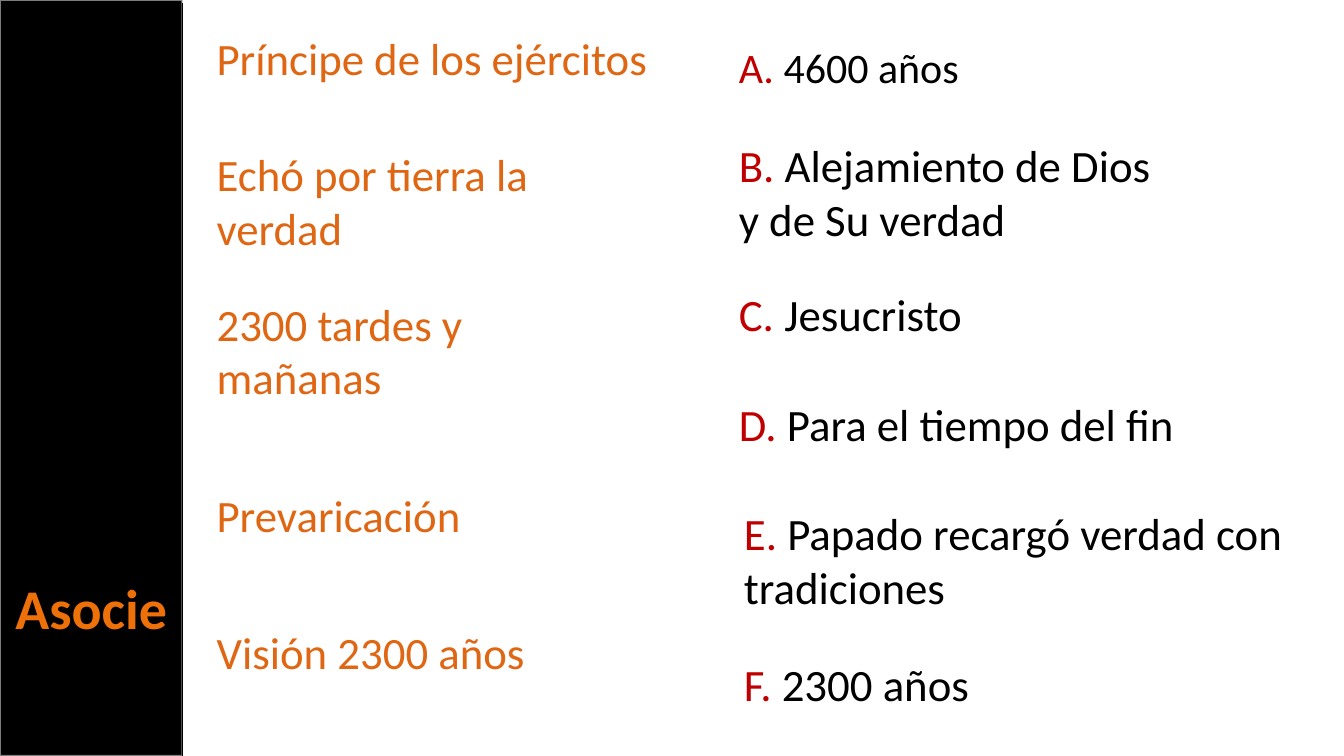
"""Build the "Asocie" matching-exercise slide."""
from pptx import Presentation
from pptx.dml.color import RGBColor
from pptx.enum.shapes import MSO_CONNECTOR, MSO_SHAPE
from pptx.enum.text import MSO_AUTO_SIZE, PP_ALIGN
from pptx.oxml.ns import qn
from pptx.util import Inches, Pt
from lxml import etree


def color(value):
    """Return the colour for a hex string."""
    return RGBColor.from_string(value)


def add_text(runs, x, y, w, h, size=32, bold=False, align=PP_ALIGN.LEFT):
    """Add a wrapped text box from (text, colour) runs."""
    tf = s.shapes.add_textbox(Inches(x), Inches(y), Inches(w), Inches(h)).text_frame
    tf.word_wrap = True
    tf.auto_size = MSO_AUTO_SIZE.SHAPE_TO_FIT_TEXT
    p = tf.paragraphs[0]
    p.alignment = align
    for text, fill in runs:
        r = p.add_run()
        r.text = text
        r.font.name = "Calibri"
        r.font.size = Pt(size)
        r.font.bold = bold
        r.font.color.rgb = color(fill)


prs = Presentation()
prs.slide_width, prs.slide_height = Inches(13.33), Inches(7.5)
s = prs.slides.add_slide(prs.slide_layouts[6])

sidebar = s.shapes.add_shape(MSO_SHAPE.RECTANGLE, 0, 0, Inches(1.81), Inches(7.5))
sidebar.shadow.inherit = False
sidebar.fill.solid()
sidebar.fill.fore_color.rgb = color("000000")
sidebar.line.color.rgb = color("F9F9F9")
sidebar.line.width = Pt(1.35)
line_color = sidebar.line._get_or_add_ln().find(".//" + qn("a:srgbClr"))
etree.SubElement(line_color, qn("a:alpha"), val="50000")

terms = [
    ("Príncipe de los ejércitos", 0.26, 4.59, 0.64),
    ("Echó por tierra la verdad", 1.41, 3.84, 1.18),
    ("2300 tardes y mañanas", 2.89, 4.13, 1.18),
    ("Prevaricación", 4.79, 4.39, 0.64),
    ("Visión 2300 años", 6.15, 4.59, 0.64),
]
for text, y, w, h in terms:
    add_text([(text, "DF6613")], 2.05, y, w, h)

answers = [
    ("4600 años", 7.23, 0.36, 4.18, 0.61, 30),
    ("Alejamiento de Dios y de Su verdad", 7.23, 1.32, 4.53, 1.18, 32),
    ("Jesucristo", 7.23, 2.8, 5, 0.64, 32),
    ("Para el tiempo del fin", 7.23, 3.89, 6.02, 0.64, 32),
    ("Papado recargó verdad con tradiciones", 7.28, 4.97, 5.59, 1.18, 32),
    ("2300 años", 7.28, 6.47, 3.02, 0.64, 32),
]
for letter, (text, x, y, w, h, size) in zip("ABCDEF", answers):
    add_text([(f"{letter}. ", "C00000"), (text, "000000")], x, y, w, h, size=size)

add_text([("Asocie", "EE7008")], 0, 5.64, 1.81, 0.77, size=40, bold=True,
         align=PP_ALIGN.CENTER)

edge = s.shapes.add_connector(MSO_CONNECTOR.STRAIGHT, Inches(1.81), Inches(0.03),
                              Inches(1.81), Inches(7.5))
edge.line.color.rgb = color("000000")
edge.line.width = Pt(0.85)
etree.SubElement(edge._element.spPr, qn("a:effectLst"))

prs.save("out.pptx")
